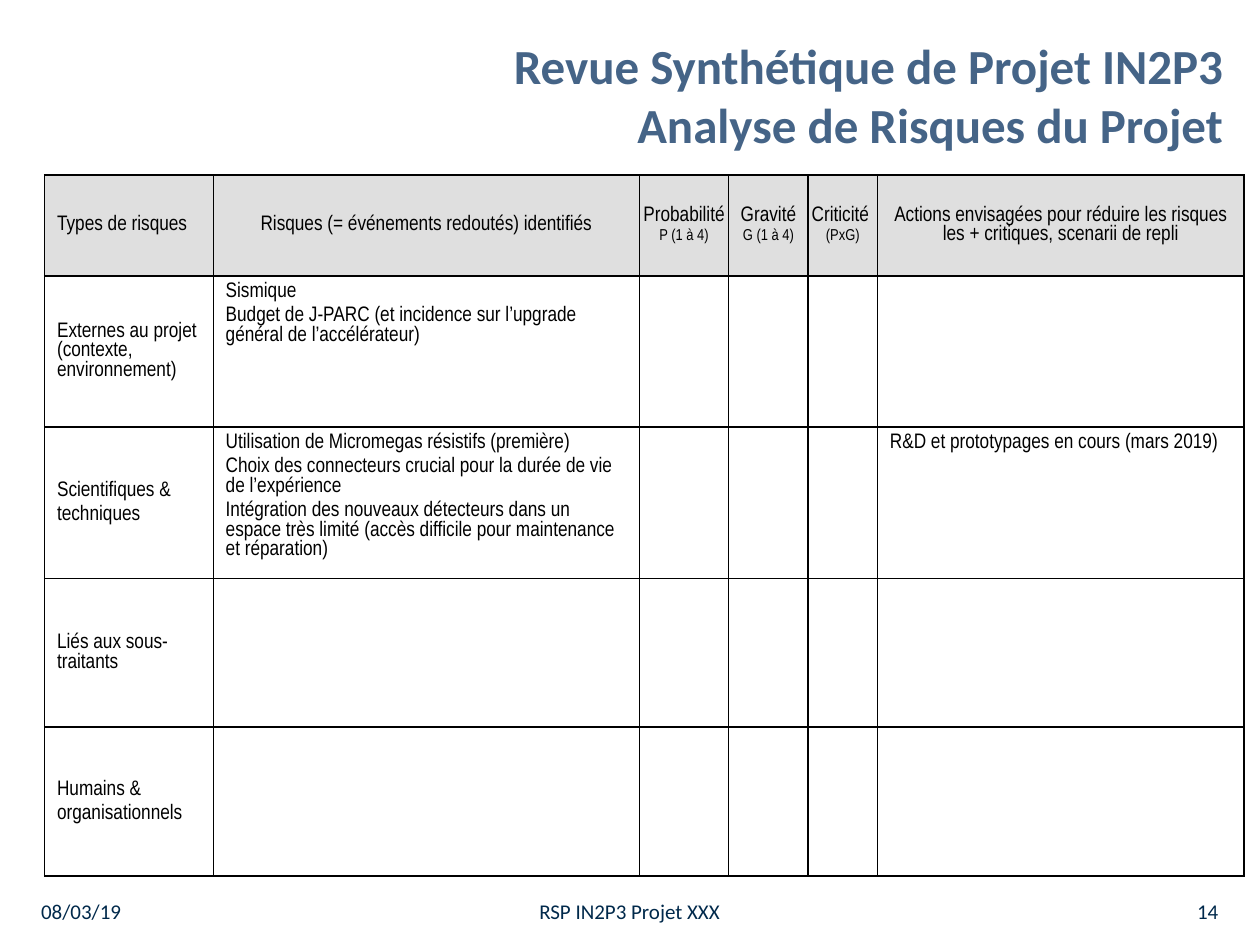
from lxml import etree
from pptx import Presentation
from pptx.dml.color import RGBColor
from pptx.enum.text import MSO_ANCHOR, PP_ALIGN
from pptx.oxml.ns import qn
from pptx.util import Cm, Pt

LEFT, MID, RIGHT = PP_ALIGN.LEFT, PP_ALIGN.CENTER, PP_ALIGN.RIGHT
TOP, HALF = MSO_ANCHOR.TOP, MSO_ANCHOR.MIDDLE

TITLE = {"name": "Calibri", "size": Pt(28), "bold": True}
FOOT = {"name": "Calibri", "size": Pt(12), "bold": False}
BODY = {"name": "Arial Narrow", "size": Pt(12), "bold": False}
SMALL = {**BODY, "size": Pt(9)}
WIDE = {"margin_left": Cm(0.25), "margin_right": Cm(0.25)}
SLIM = {"margin_left": Cm(0.05), "margin_right": Cm(0.05)}

COLS = [3.4, 8.59, 1.8, 1.6, 1.4, 7.39]
ROWS = [2.03, 3.05, 3.05, 3, 3]
HEAD = [
    ["Types de risques"],
    ["Risques (= événements redoutés) identifiés"],
    ["Probabilité", "P (1 à 4)"],
    ["Gravité", "G (1 à 4)"],
    ["Criticité ", "(PxG)"],
    ["Actions envisagées pour réduire les risques les + critiques, scenarii de repli"],
]
RISKS = [
    {
        0: ["Externes au projet (contexte, environnement)"],
        1: [
            "Sismique",
            "Budget de J-PARC (et incidence sur l’upgrade général de l’accélérateur)",
        ],
    },
    {
        0: ["Scientifiques &", "techniques"],
        1: [
            "Utilisation de Micromegas résistifs (première)",
            "Choix des connecteurs crucial pour la durée de vie de l’expérience",
            "Intégration des nouveaux détecteurs dans un espace très limité "
            "(accès difficile pour maintenance et réparation)",
        ],
        5: ["R&D et prototypages en cours (mars 2019)"],
    },
    {0: ["Liés aux sous-traitants"]},
    {0: ["Humains &", "organisationnels"]},
]


def shade(code):
    """Turn a hex string into a colour."""
    return RGBColor.from_string(code)


def apply(item, values):
    """Set each attribute of an item from a dict."""
    for key, value in values.items():
        setattr(item, key, value)


def write(para, text, style, code, align):
    """Fill one paragraph with styled text."""
    para.text = text
    para.alignment = align
    for run in para.runs:
        apply(run.font, style)
        run.font.color.rgb = shade(code)


def label(slide, box, text, style, code, align):
    """Place a wrapped text box, centred in height."""
    frame = slide.shapes.add_textbox(*map(Cm, box)).text_frame
    apply(frame, {"word_wrap": True, "vertical_anchor": HALF})
    write(frame.paragraphs[0], text, style, code, align)


def border(cell):
    """Draw black lines on all four sides of a cell."""
    props = cell._tc.get_or_add_tcPr()
    for spot, side in enumerate(("a:lnL", "a:lnR", "a:lnT", "a:lnB")):
        line = etree.Element(qn(side), w=str(Pt(1)))
        solid = etree.SubElement(line, qn("a:solidFill"))
        etree.SubElement(solid, qn("a:srgbClr"), val="000000")
        props.insert(spot, line)


def tint(cell):
    """Give a cell a half transparent grey fill."""
    cell.fill.solid()
    cell.fill.fore_color.rgb = shade("C0C0C0")
    for code in cell._tc.tcPr.iter(qn("a:srgbClr")):
        etree.SubElement(code, qn("a:alpha"), val="50000")


def fill(cell, lines, styles, align):
    """Write tightly set lines into a cell, a fifth of their size apart."""
    frame = cell.text_frame
    for spot, (text, style) in enumerate(zip(lines, styles)):
        para = frame.add_paragraph() if spot else frame.paragraphs[0]
        write(para, text, style, "000000", align)
        size = style["size"].pt
        para.line_spacing = Pt(size * 0.94)
        if spot:
            para.space_before = Pt(size * 0.2)


def grid(slide, left, top):
    """Build the table of risks from its top left corner."""
    box = map(Cm, (left, top, sum(COLS), sum(ROWS)))
    table = slide.shapes.add_table(len(ROWS), len(COLS), *box).table
    apply(table, {"first_row": False, "horz_banding": False})
    for col, width in zip(table.columns, COLS):
        col.width = Cm(width)
    for row, height in zip(table.rows, ROWS):
        row.height = Cm(height)
    for r, texts in enumerate([dict(enumerate(HEAD)), *RISKS]):
        for c in range(len(COLS)):
            cell = table.cell(r, c)
            head = r == 0
            apply(cell, SLIM if head and 2 <= c <= 4 else WIDE)
            cell.vertical_anchor = HALF if head or c == 0 else TOP
            if head:
                tint(cell)
            else:
                cell.fill.background()
            border(cell)
            styles = [BODY, SMALL] if head else [BODY] * 3
            fill(cell, texts.get(c, []), styles, MID if head and c else LEFT)


def title(slide, box):
    """Place the two line title."""
    text = "Revue Synthétique de Projet IN2P3\vAnalyse de Risques du Projet"
    label(slide, box, text, TITLE, "456487", RIGHT)


def footer(slide, left, top, width, height):
    """Place date, project and page number across a strip."""
    side, core = 5.92, 10.39
    parts = [
        (0, side, "08/03/19", LEFT),
        ((width - core) / 2, core, "RSP IN2P3 Projet XXX", MID),
        (width - side, side, "14", RIGHT),
    ]
    for shift, span, text, align in parts:
        box = (left + shift, top, span, height)
        label(slide, box, text, FOOT, "00294B", align)


def main():
    """Build and save the slide."""
    deck = Presentation()
    apply(deck, {"slide_width": Cm(25.4), "slide_height": Cm(19.05)})
    slide = deck.slides.add_slide(deck.slide_layouts[6])
    footer(slide, 0.58, 17.86, 24.23, 1.02)
    title(slide, (7.7, 0.32, 17.2, 3.18))
    grid(slide, 0.9, 3.53)
    deck.save("out.pptx")


if __name__ == "__main__":
    main()
